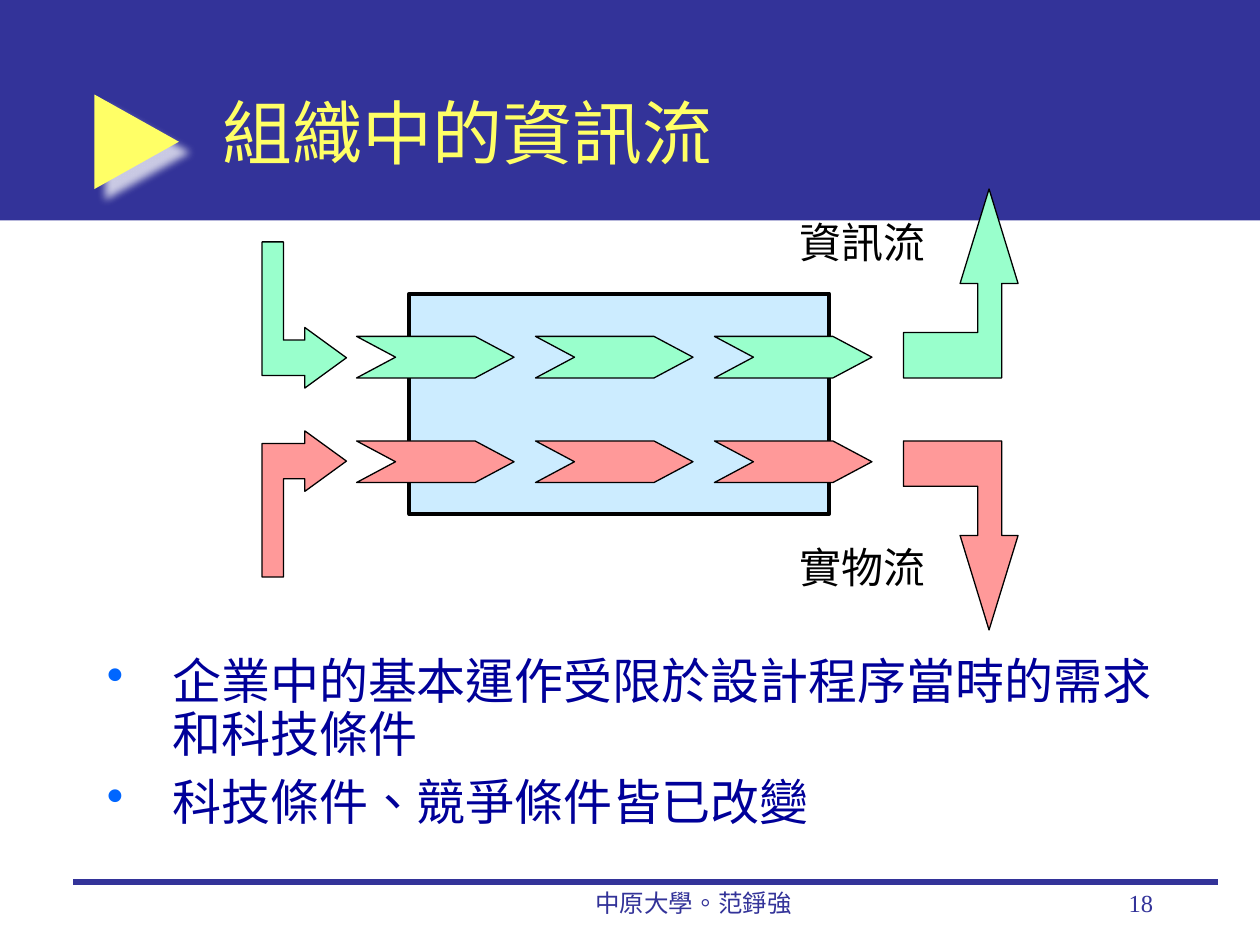
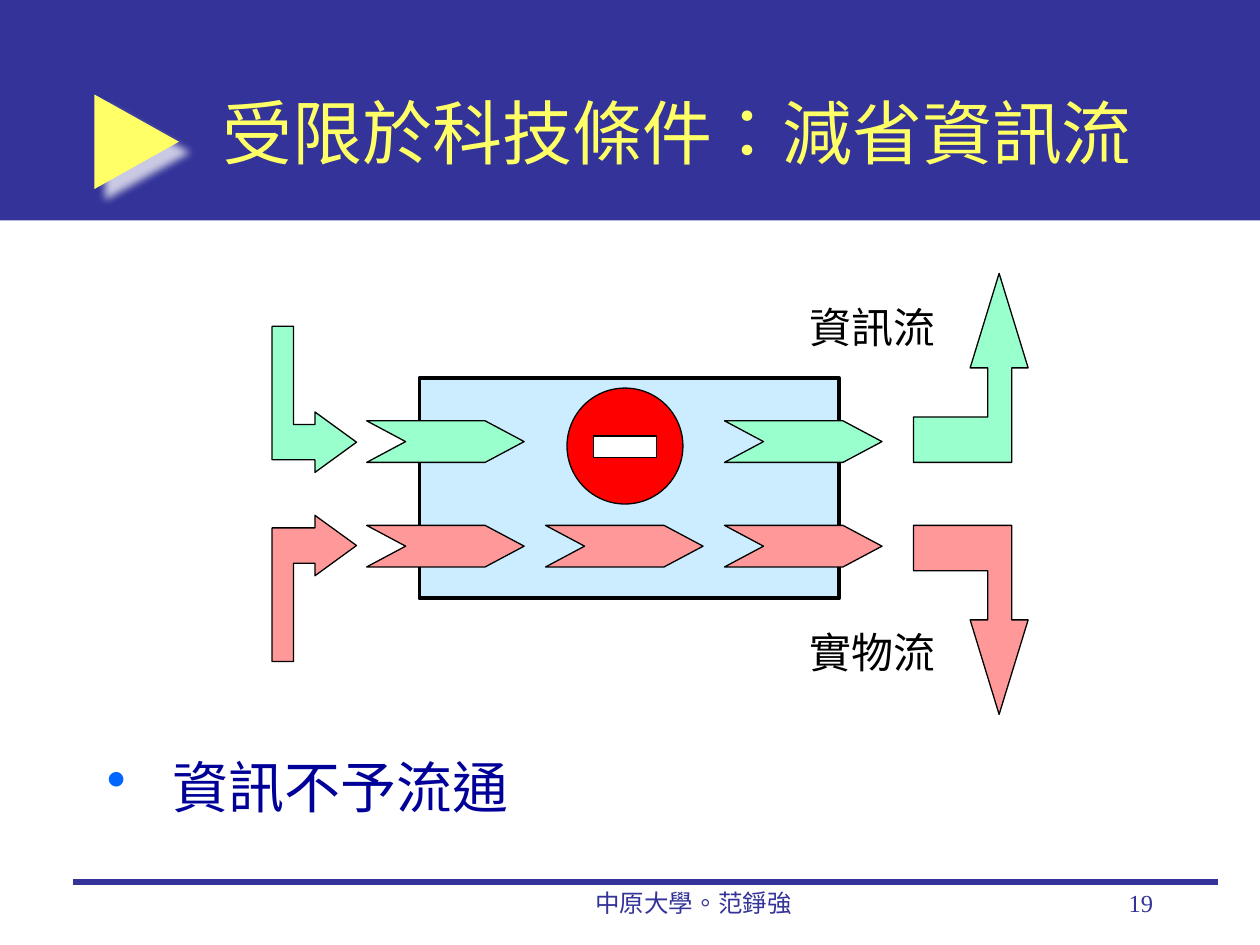
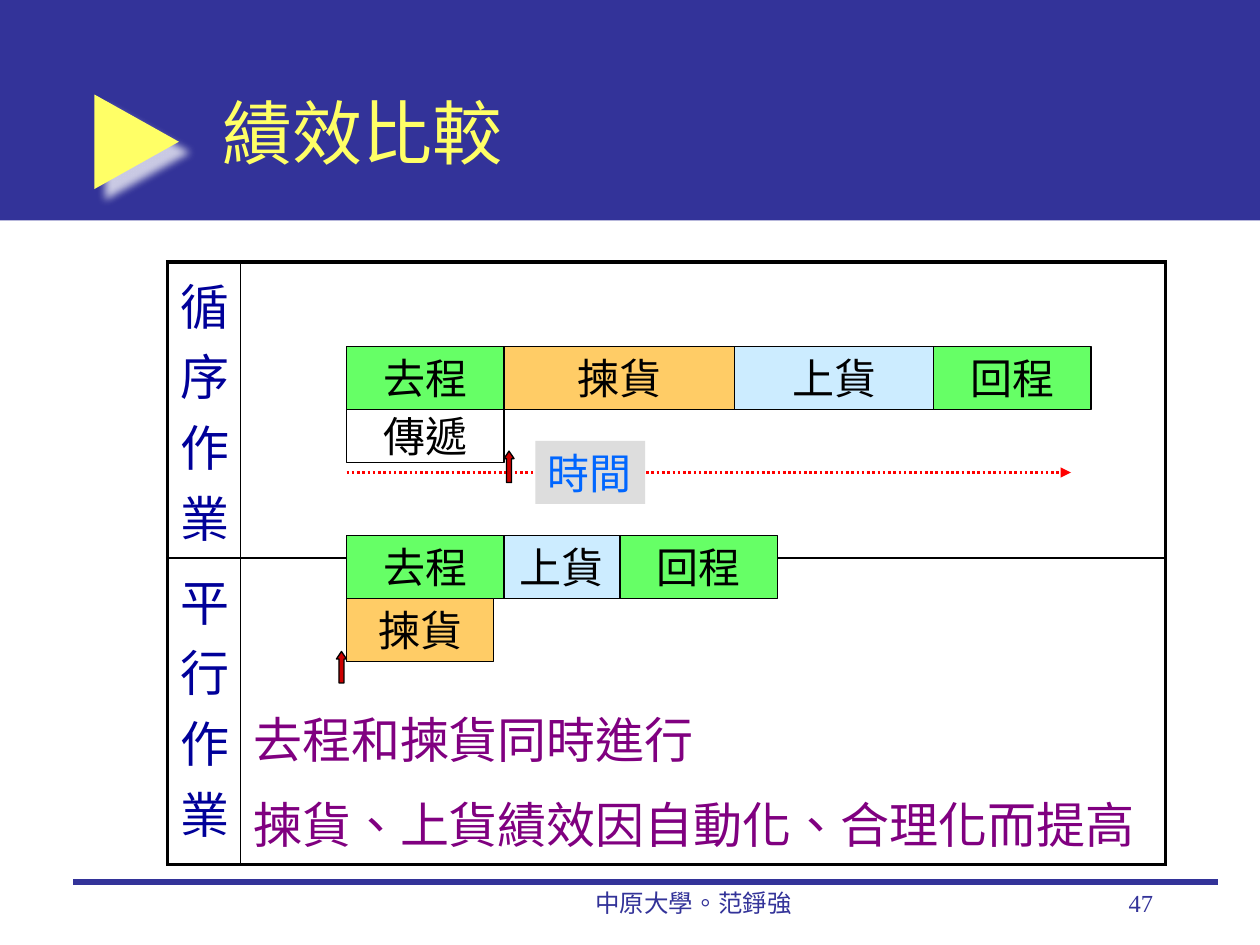
from lxml import etree
from pptx import Presentation
from pptx.dml.color import RGBColor
from pptx.enum.dml import MSO_LINE
from pptx.enum.shapes import MSO_CONNECTOR, MSO_SHAPE
from pptx.enum.text import MSO_ANCHOR, MSO_AUTO_SIZE, PP_ALIGN
from pptx.oxml import parse_xml
from pptx.oxml.ns import nsdecls, qn
from pptx.util import Inches, Pt

RECT, CHEVRON, OVAL = MSO_SHAPE.RECTANGLE, MSO_SHAPE.CHEVRON, MSO_SHAPE.OVAL
RIGHT_ARROW, UP_ARROW = MSO_SHAPE.RIGHT_ARROW, MSO_SHAPE.UP_ARROW
STRAIGHT, DOTTED = MSO_CONNECTOR.STRAIGHT, MSO_LINE.ROUND_DOT
LEFT, CENTER, RIGHT = PP_ALIGN.LEFT, PP_ALIGN.CENTER, PP_ALIGN.RIGHT
TOP, MIDDLE, BOTTOM = MSO_ANCHOR.TOP, MSO_ANCHOR.MIDDLE, MSO_ANCHOR.BOTTOM
FIT_TEXT = MSO_AUTO_SIZE.SHAPE_TO_FIT_TEXT

INDIGO = RGBColor(0x33, 0x33, 0x99)
YELLOW = RGBColor(0xFF, 0xFF, 0x66)
NAVY = RGBColor(0x00, 0x00, 0x99)
BLUE = RGBColor(0x00, 0x66, 0xFF)
SKY = RGBColor(0xCC, 0xEC, 0xFF)
MINT = RGBColor(0x99, 0xFF, 0xCC)
SALMON = RGBColor(0xFF, 0x99, 0x99)
GREEN = RGBColor(0x66, 0xFF, 0x66)
ORANGE = RGBColor(0xFF, 0xCC, 0x66)
PURPLE = RGBColor(0x80, 0x00, 0x80)
RED = RGBColor(0xFF, 0x00, 0x00)
DARK_RED = RGBColor(0xCC, 0x00, 0x00)
GRAY = RGBColor(0xDD, 0xDD, 0xDD)
BLACK = RGBColor(0x00, 0x00, 0x00)
WHITE = RGBColor(0xFF, 0xFF, 0xFF)

SERIF, CJK = "Times New Roman", "Noto Sans CJK SC"
FOOTER = "中原大學。范錚強"

# Content: flow slides; origin is the left side of the process box and the axis between flows
FLOW_SLIDES = [
    {"title": "組織中的資訊流", "number": 18, "origin": (3.25, 3.25), "blocked": False,
     "bullets": ["企業中的基本運作受限於設計程序當時的需求和科技條件",
                 "科技條件、競爭條件皆已改變"],
     "body": (0.75, 5.17, 8.5, 1.42), "size": 28, "spacing": 0.9},
    {"title": "受限於科技條件：減省資訊流", "number": 19, "origin": (3.33, 3.92), "blocked": True,
     "bullets": ["資訊不予流通"],
     "body": (0.75, 5.92, 8.5, 0.75), "size": 32, "spacing": 1.0},
]
# Label, colour, side of the axis, label top
FLOWS = [("資訊流", MINT, -1, -1.58), ("實物流", SALMON, 1, 1.0)]
ENTRY_ARROW = [(-0.5, 0.41), (-0.83, 0.65), (-0.83, 0.55), (-1, 0.55), (-1, 1.33),
               (-1.17, 1.33), (-1.17, 0.27), (-0.83, 0.27), (-0.83, 0.17)]
EXIT_ARROW = [(4.6, 1.75), (4.37, 1), (4.51, 1), (4.51, 0.61), (3.92, 0.61),
              (3.92, 0.25), (4.7, 0.25), (4.7, 1), (4.83, 1)]

# Content: performance comparison
COMPARISON = {"title": "績效比較", "number": 47}
TABLE_ROWS = [("循序作業", []),
              ("平行作業", ["去程和揀貨同時進行", "揀貨、上貨績效因自動化、合理化而提高"])]
COLUMN_WIDTHS, ROW_HEIGHTS = (0.58, 7.34), (2.35, 2.43)
TIMELINE_LEFT = 2.75
# Top, height, steps as (label, width, colour)
TIMELINES = [
    (2.75, 0.5, [("去程", 1.25, GREEN), ("揀貨", 1.83, ORANGE),
                 ("上貨", 1.58, SKY), ("回程", 1.25, GREEN)]),
    (4.25, 0.5, [("去程", 1.25, GREEN), ("上貨", 0.92, SKY), ("回程", 1.25, GREEN)]),
    (4.75, 0.5, [("揀貨", 1.17, ORANGE)]),
    (3.25, 0.42, [("傳遞", 1.25, WHITE)]),
]
START_MARKS = [(4, 3.58), (2.67, 5.17)]


def set_all(target, **values):
    for name, value in values.items():
        setattr(target, name, value)


def write(frame, lines, size, color, font=SERIF, align=LEFT, spacing=1.0, bullet=False):
    for i, line in enumerate(lines):
        paragraph = frame.paragraphs[0] if i == 0 else frame.add_paragraph()
        if bullet:
            properties = paragraph._p.get_or_add_pPr()
            set_indent = {"marL": Inches(0.52), "indent": -Inches(0.52)}
            for name, value in set_indent.items():
                properties.set(name, str(int(value)))
            mark = etree.SubElement(properties, qn("a:buClr"))
            etree.SubElement(mark, qn("a:srgbClr"), val=str(BLUE))
            etree.SubElement(properties, qn("a:buChar"), char="•")
        set_all(paragraph, alignment=align, line_spacing=spacing)
        if i:
            paragraph.space_before = Pt(size * 0.3)
        run = paragraph.add_run()
        run.text = line
        set_all(run.font, size=Pt(size), name=font)
        run.font.color.rgb = color
        run_properties = run.font._element
        run_properties.set("lang", "zh-TW")
        etree.SubElement(run_properties, qn("a:ea"), typeface=CJK)


def add_text(slide, box, lines, size, color, anchor=TOP, wrap=True, **style):
    frame = slide.shapes.add_textbox(*map(Inches, box)).text_frame
    set_all(frame, word_wrap=wrap, vertical_anchor=anchor)
    if not wrap:
        frame.auto_size = FIT_TEXT
    write(frame, lines, size, color, **style)
    return frame


def paint(shape, fill, line_width):
    shape.shadow.inherit = False
    shape.fill.solid()
    shape.fill.fore_color.rgb = fill
    if line_width:
        shape.line.color.rgb = BLACK
        shape.line.width = Pt(line_width)
    else:
        shape.line.fill.background()


def add_block(slide, preset, box, fill, line_width=0.75, adjustments=()):
    block = slide.shapes.add_shape(preset, *map(Inches, box))
    for i, value in enumerate(adjustments):
        block.adjustments[i] = value
    paint(block, fill, line_width)
    return block


def add_outline(slide, points, fill):
    corners = [(Inches(x), Inches(y)) for x, y in points]
    builder = slide.shapes.build_freeform(*corners[0])
    builder.add_line_segments(corners[1:], close=True)
    paint(builder.convert_to_shape(), fill, 0.75)


def add_line(slide, start, end, color, width):
    line = slide.shapes.add_connector(STRAIGHT, *map(Inches, start + end))
    line.line.color.rgb = color
    line.line.width = Pt(width)
    etree.SubElement(line._element.spPr, qn("a:effectLst"))
    return line


def add_base_slide(deck, content):
    slide = deck.slides.add_slide(deck.slide_layouts[6])
    # Band with title and pointer
    add_block(slide, RECT, (0, 0, 10, 1.75), INDIGO, 0)
    pointer = add_block(slide, RIGHT_ARROW, (0.75, 0.75, 0.67, 0.75), YELLOW, 0, (0.384, 1))
    pointer._element.spPr.find(qn("a:effectLst")).append(parse_xml(
        f'<a:outerShdw {nsdecls("a")} blurRad="{Pt(5)}" dist="{Pt(8.5)}" dir="2700000" '
        f'algn="ctr" rotWithShape="0"><a:srgbClr val="{WHITE}"><a:alpha val="75000"/>'
        '</a:srgbClr></a:outerShdw>'))
    add_text(slide, (1.67, 0.42, 7.58, 1.25), [content["title"]], 40, YELLOW,
             anchor=MIDDLE, font=CJK)
    # Footer
    add_line(slide, (0.58, 7), (9.67, 7), INDIGO, 3)
    add_text(slide, (3.92, 7, 3.17, 0.5), [FOOTER], 14, INDIGO, align=CENTER)
    add_text(slide, (7.17, 7, 2.08, 0.5), [str(content["number"])], 14, INDIGO, align=RIGHT)
    return slide


def add_flow_slide(deck, content):
    slide = add_base_slide(deck, content)
    left, axis = content["origin"]
    add_text(slide, content["body"], content["bullets"], content["size"], NAVY,
             spacing=content["spacing"], bullet=True)
    # Process box crossed by mirrored flows
    add_block(slide, RECT, (left, axis - 0.92, 3.33, 1.75), SKY, 2.25)
    for label, color, side, label_top in FLOWS:
        for arrow in (ENTRY_ARROW, EXIT_ARROW):
            add_outline(slide, [(left + x, axis + side * y) for x, y in arrow], color)
        step_top = axis + side * 0.415 - 0.165
        for i in range(3):
            if content["blocked"] and side < 0 and i == 1:
                continue
            add_block(slide, CHEVRON, (left - 0.42 + 1.42 * i, step_top, 1.25, 0.33),
                      color, adjustments=(0.938,))
        add_text(slide, (left + 3, axis + label_top, 1.2, 0.5), [label], 24, BLACK, wrap=False)
    # No-entry sign
    if content["blocked"]:
        add_block(slide, OVAL, (left + 1.17, axis - 0.84, 0.92, 0.92), RED)
        add_block(slide, RECT, (left + 1.38, axis - 0.46, 0.5, 0.17), WHITE)


def set_borders(cell, widths):
    properties = cell._tc.get_or_add_tcPr()
    for i, (side, width) in enumerate(widths.items()):
        properties.insert(i, parse_xml(
            f'<a:ln{side} {nsdecls("a")} w="{Pt(width)}"><a:solidFill>'
            f'<a:srgbClr val="{BLACK}"/></a:solidFill></a:ln{side}>'))


def add_comparison_table(slide):
    frame = slide.shapes.add_table(2, 2, Inches(1.33), Inches(2.08),
                                   Inches(sum(COLUMN_WIDTHS)), Inches(sum(ROW_HEIGHTS)))
    table = frame.table
    set_all(table, first_row=False, horz_banding=False)
    for column, width in zip(table.columns, COLUMN_WIDTHS):
        column.width = Inches(width)
    for r, (mode, remarks) in enumerate(TABLE_ROWS):
        table.rows[r].height = Inches(ROW_HEIGHTS[r])
        for c, (lines, color) in enumerate([([mode], NAVY), (remarks, PURPLE)]):
            cell = table.cell(r, c)
            cell.fill.background()
            cell.vertical_anchor = BOTTOM if c else TOP
            outer = {"L": c == 0, "R": c == 1, "T": r == 0, "B": r == 1}
            set_borders(cell, {side: 2.25 if edge else 1 for side, edge in outer.items()})
            write(cell.text_frame, lines, 28, color)


def add_comparison_slide(deck):
    slide = add_base_slide(deck, COMPARISON)
    add_comparison_table(slide)
    # Time axis
    time_axis = add_line(slide, (2.75, 3.75), (8.5, 3.75), RED, 1.5)
    time_axis.line.dash_style = DOTTED
    etree.SubElement(time_axis.line._get_or_add_ln(), qn("a:tailEnd"), type="triangle")
    # Steps laid end to end
    for top, height, steps in TIMELINES:
        left = TIMELINE_LEFT
        for label, width, color in steps:
            step = add_block(slide, RECT, (left, top, width, height), color)
            set_all(step.text_frame, word_wrap=False, vertical_anchor=MIDDLE)
            write(step.text_frame, [label], 24, BLACK, align=CENTER)
            left += width
    # Time label and start marks
    time_label = add_block(slide, RECT, (4.25, 3.5, 0.87, 0.5), GRAY, 0)
    set_all(time_label.text_frame, word_wrap=False, auto_size=FIT_TEXT, vertical_anchor=TOP)
    write(time_label.text_frame, ["時間"], 24, BLUE)
    for left, top in START_MARKS:
        add_block(slide, UP_ARROW, (left, top, 0.08, 0.25), DARK_RED, adjustments=(0.5, 0.75))


def main():
    deck = Presentation()
    set_all(deck, slide_width=Inches(10), slide_height=Inches(7.5))
    for content in FLOW_SLIDES:
        add_flow_slide(deck, content)
    add_comparison_slide(deck)
    deck.save("out.pptx")


if __name__ == "__main__":
    main()
